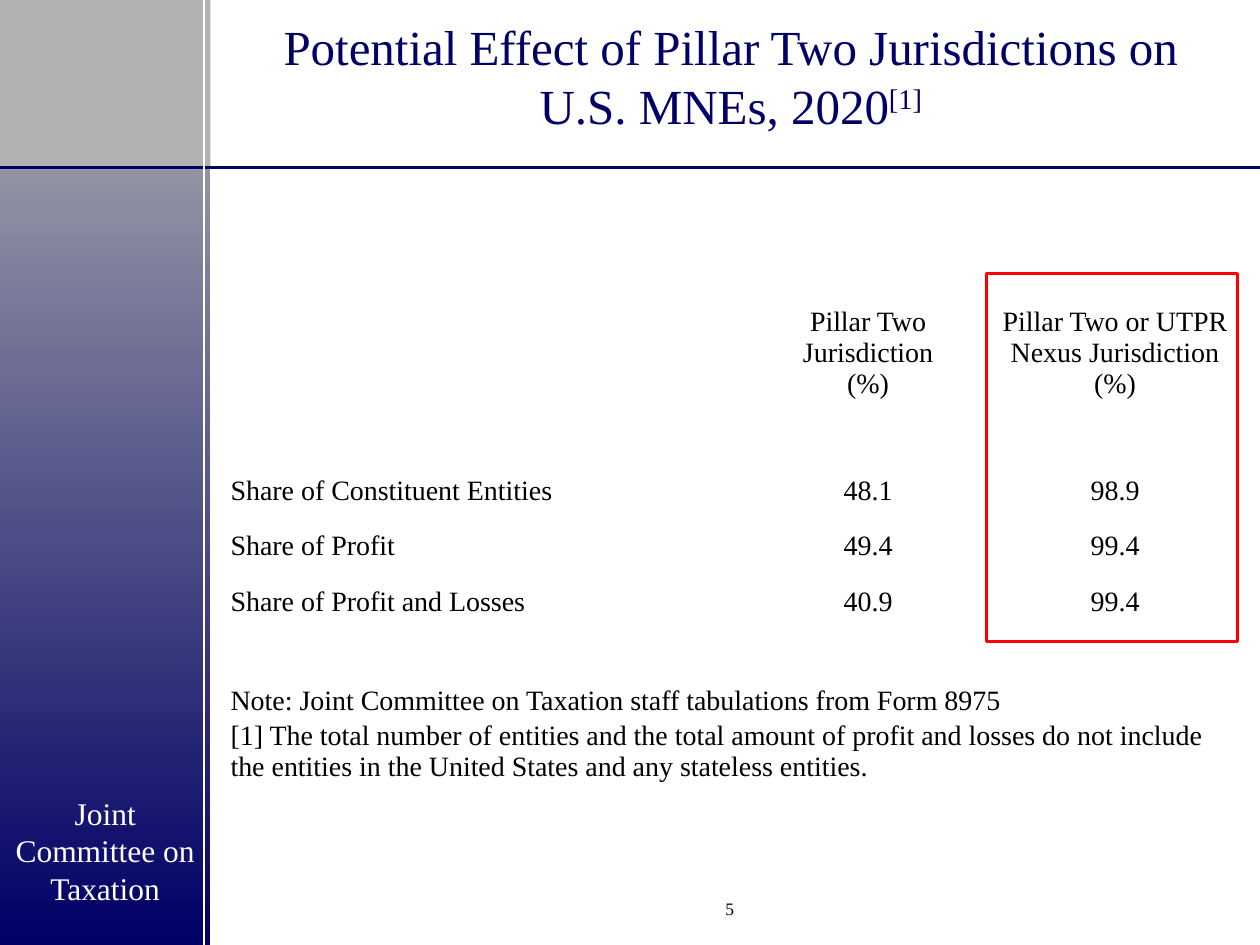
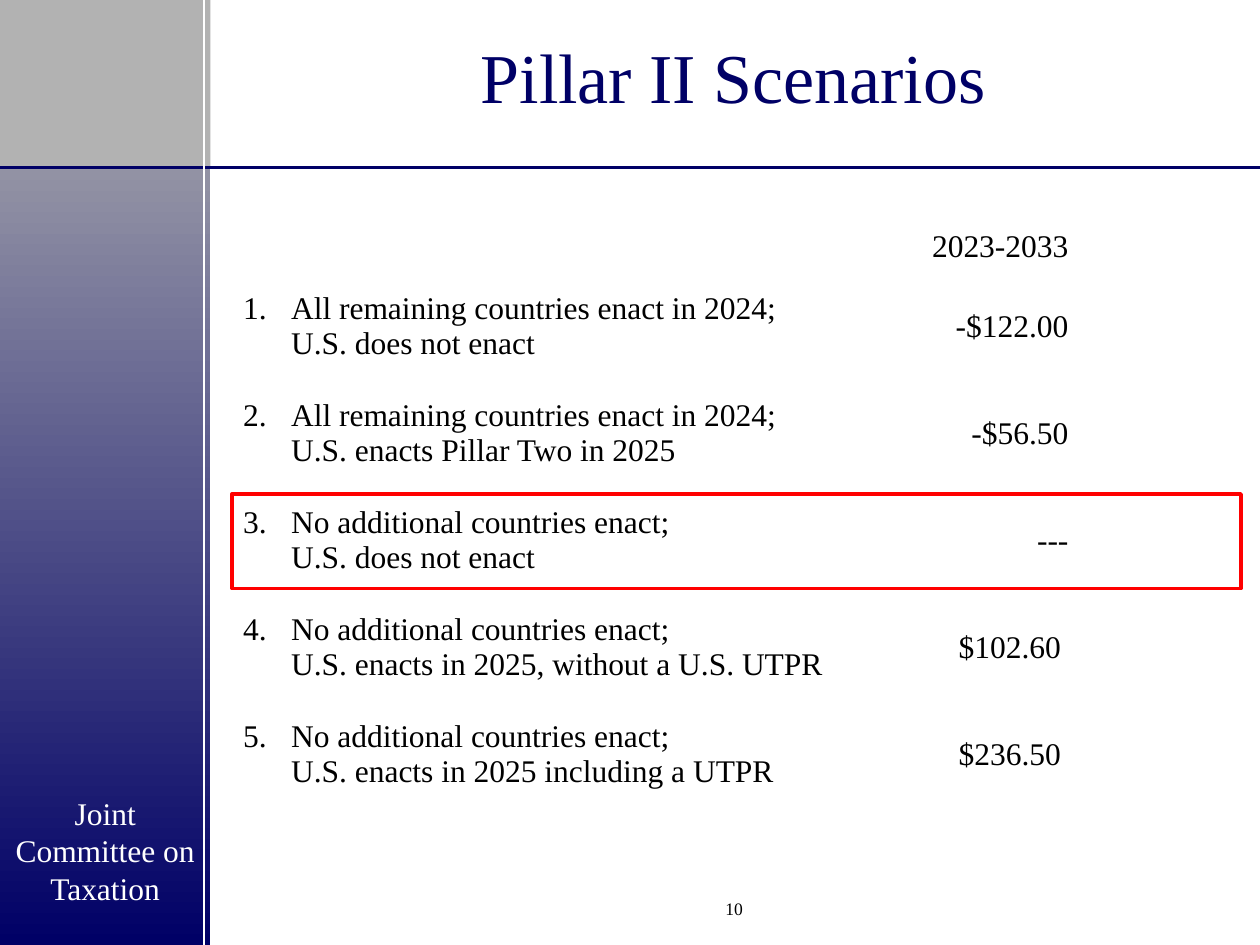
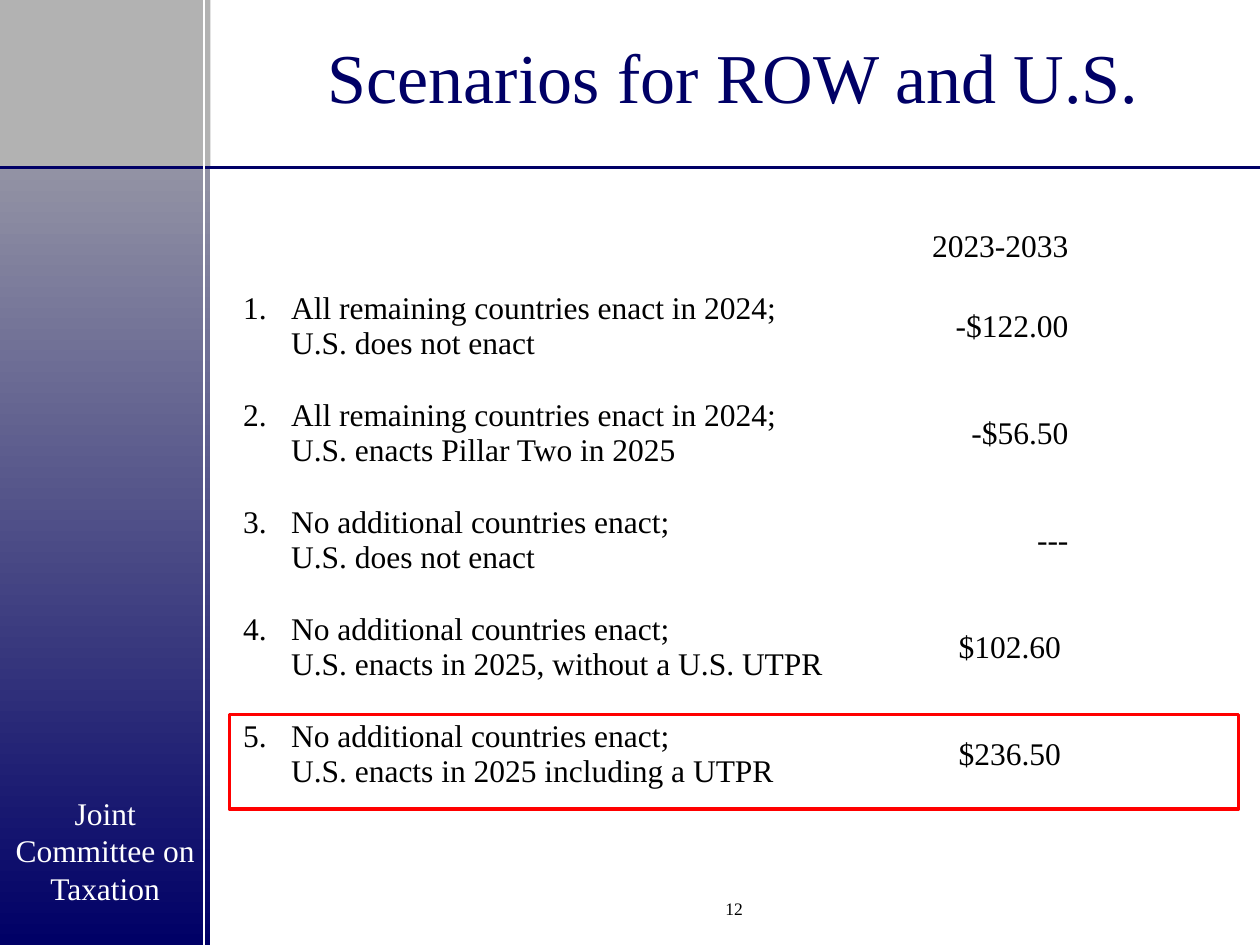
from dataclasses import dataclass

from lxml import etree
from pptx import Presentation
from pptx.dml.color import RGBColor
from pptx.enum.shapes import MSO_CONNECTOR, MSO_SHAPE
from pptx.enum.text import MSO_ANCHOR, PP_ALIGN
from pptx.oxml.ns import qn
from pptx.util import Inches, Pt

STRAIGHT = MSO_CONNECTOR.STRAIGHT
RECTANGLE = MSO_SHAPE.RECTANGLE
MIDDLE, BOTTOM = MSO_ANCHOR.MIDDLE, MSO_ANCHOR.BOTTOM
LEFT, CENTER, RIGHT = PP_ALIGN.LEFT, PP_ALIGN.CENTER, PP_ALIGN.RIGHT

FONT = "Times New Roman"
COLORS = {
    "navy": "000066",
    "gray": "B2B2B2",
    "white": "FFFFFF",
    "black": "000000",
    "red": "FF0000",
}
SLIDE_WIDTH, SLIDE_HEIGHT = 10, 7.5
BAND_WIDTH, HEADER_HEIGHT = 1.67, 1.33
CELL_MARGIN = 0.01
LIST_INDENT = 0.38


@dataclass(frozen=True)
class Box:
    left: float
    top: float
    width: float
    height: float

    def lengths(self) -> tuple:
        return tuple(Inches(v) for v in (self.left, self.top, self.width, self.height))


@dataclass(frozen=True)
class Scenario:
    countries: str
    united_states: str
    amount: str
    right_margin: float = CELL_MARGIN


@dataclass(frozen=True)
class ScenarioSlide:
    title: str
    number: int
    highlight: Box


SHARE_ROWS = [
    ("", "Pillar Two Jurisdiction\v(%)", "Pillar Two or UTPR Nexus Jurisdiction (%)"),
    ("Share of Constituent Entities", "48.1", "98.9"),
    ("Share of Profit", "49.4", "99.4"),
    ("Share of Profit and Losses", "40.9", "99.4"),
]
SHARE_NOTES = [
    ("Note: Joint Committee on Taxation staff tabulations from Form 8975", BOTTOM),
    ("[1] The total number of entities and the total amount of profit and losses do "
     "not include the entities in the United States and any stateless entities.", MIDDLE),
]
SCENARIOS = [
    Scenario("All remaining countries enact in 2024;", "U.S. does not enact", "-$122.00"),
    Scenario("All remaining countries enact in 2024;", "U.S. enacts Pillar Two in 2025",
             "-$56.50"),
    Scenario("No additional countries enact;", "U.S. does not enact", "---"),
    Scenario("No additional countries enact;", "U.S. enacts in 2025, without a U.S. UTPR",
             "$102.60", 0.07),
    Scenario("No additional countries enact;", "U.S. enacts in 2025 including a UTPR",
             "$236.50", 0.07),
]
SCENARIO_SLIDES = [
    ScenarioSlide("Pillar II Scenarios", 10, Box(1.84, 3.92, 8.01, 0.75)),
    ScenarioSlide("Scenarios for ROW and U.S.", 12, Box(1.82, 5.67, 8.01, 0.75)),
]


def rgb(name: str) -> RGBColor:
    return RGBColor.from_string(COLORS[name])


def format_text(text_frame, size: float, color: str, align=LEFT) -> None:
    for paragraph in text_frame.paragraphs:
        paragraph.alignment = align
        paragraph.font.size = Pt(size)
        for run in paragraph.runs:
            run.font.name = FONT
            run.font.size = Pt(size)
            run.font.bold = False
            run.font.color.rgb = rgb(color)


def add_text(slide, box: Box, text: str, size: float, color: str, align=LEFT, wrap=True):
    text_frame = slide.shapes.add_textbox(*box.lengths()).text_frame
    text_frame.word_wrap = wrap
    text_frame.text = text
    format_text(text_frame, size, color, align)
    return text_frame


def add_rectangle(slide, box: Box):
    shape = slide.shapes.add_shape(RECTANGLE, *box.lengths())
    shape.shadow.inherit = False
    return shape


def add_line(slide, start: tuple, end: tuple, color: str, width: float) -> None:
    connector = slide.shapes.add_connector(
        STRAIGHT, *(Inches(value) for value in (*start, *end)))
    connector.line.color.rgb = rgb(color)
    connector.line.width = Pt(width)
    etree.SubElement(connector._element.spPr, qn("a:effectLst"))


def add_highlight(slide, box: Box) -> None:
    shape = add_rectangle(slide, box)
    shape.fill.background()
    shape.line.color.rgb = rgb("red")
    shape.line.width = Pt(2)


def add_base_slide(presentation, number: int):
    """Add a blank slide with the side band, rules and page number."""
    slide = presentation.slides.add_slide(presentation.slide_layouts[6])

    band = add_rectangle(slide, Box(0, 0, BAND_WIDTH, SLIDE_HEIGHT))
    band.line.fill.background()
    band.fill.gradient()
    band.fill.gradient_angle = 270
    for stop, color, position in zip(band.fill.gradient_stops, ("gray", "navy"), (0, 1)):
        stop.color.rgb = rgb(color)
        stop.position = position

    corner = add_rectangle(slide, Box(0, 0, BAND_WIDTH, HEADER_HEIGHT))
    corner.line.fill.background()
    corner.fill.solid()
    corner.fill.fore_color.rgb = rgb("gray")

    add_line(slide, (0, HEADER_HEIGHT), (SLIDE_WIDTH, HEADER_HEIGHT), "navy", 1.5)
    add_text(slide, Box(0, 6.25, BAND_WIDTH, 1), "Joint Committee on Taxation",
             18, "white", CENTER)
    add_line(slide, (1.62, 0), (1.62, SLIDE_HEIGHT), "white", 0.75)
    add_text(slide, Box(5.66, 7.08, 0.37, 0.27), str(number), 10, "black", wrap=False)
    return slide


def add_title(slide, text: str, size: float, left: float):
    text_frame = add_text(slide, Box(left, 0.2, 8.06, 0.8), text, size, "navy", CENTER)
    text_frame.vertical_anchor = MIDDLE
    return text_frame


def add_plain_table(slide, left: float, top: float, widths: list, heights: list):
    """Add an empty table whose cells are all white."""
    box = Box(left, top, sum(widths), sum(heights))
    table = slide.shapes.add_table(len(heights), len(widths), *box.lengths()).table
    table.first_row = table.horz_banding = False
    for column, width in zip(table.columns, widths):
        column.width = Inches(width)
    for row, height in zip(table.rows, heights):
        row.height = Inches(height)
    for cell in table.iter_cells():
        cell.fill.solid()
        cell.fill.fore_color.rgb = rgb("white")
    return table


def fill_cell(cell, text: str, size: float, align=LEFT, anchor=MIDDLE,
              left: float = CELL_MARGIN, right: float = CELL_MARGIN) -> None:
    cell.margin_left, cell.margin_right = Inches(left), Inches(right)
    cell.margin_top, cell.margin_bottom = Inches(CELL_MARGIN), 0
    cell.vertical_anchor = anchor
    cell.text_frame.text = text
    format_text(cell.text_frame, size, "black", align)


def indent_scenario(text_frame, number: int) -> None:
    """Number the first line and align the second line with its text."""
    for paragraph, hanging in zip(text_frame.paragraphs, (LIST_INDENT, 0)):
        properties = paragraph._p.get_or_add_pPr()
        properties.set("marL", str(Inches(LIST_INDENT)))
        properties.set("indent", str(-Inches(hanging)))
    first = text_frame.paragraphs[0]._p.get_or_add_pPr()
    numbering = etree.Element(
        qn("a:buAutoNum"), type="arabicPeriod", startAt=str(number))
    first.insert(0, numbering)


def add_share_slide(presentation) -> None:
    slide = add_base_slide(presentation, 5)
    title = add_title(
        slide, "Potential Effect of Pillar Two Jurisdictions on U.S. MNEs, 2020", 28, 1.77)
    footnote_mark = title.paragraphs[0].add_run()
    footnote_mark.text = "[1]"
    format_text(title, 28, "navy", CENTER)
    footnote_mark._r.get_or_add_rPr().set("baseline", "30000")

    table = add_plain_table(slide, 1.82, 1.92, [4.09, 1.96, 1.96],
                            [1.75, 0.44, 0.44, 0.45, 0.69, 0.4, 0.4])
    for row_index, values in enumerate(SHARE_ROWS):
        for column_index, value in enumerate(values):
            fill_cell(table.cell(row_index, column_index), value, 16,
                      CENTER if column_index else LEFT)
    for row_index, (note, anchor) in enumerate(SHARE_NOTES, start=len(SHARE_ROWS)):
        cell = table.cell(row_index, 0)
        cell.merge(table.cell(row_index, 2))
        fill_cell(cell, note, 16, anchor=anchor)
    add_highlight(slide, Box(7.83, 2.17, 1.99, 2.92))


def add_scenario_slide(presentation, content: ScenarioSlide) -> None:
    slide = add_base_slide(presentation, content.number)
    table = add_plain_table(slide, 1.83, 1.75, [5.33, 1.33],
                            [0.41] + [0.85] * len(SCENARIOS))
    fill_cell(table.cell(0, 1), "2023-2033", 18, RIGHT)
    for number, scenario in enumerate(SCENARIOS, start=1):
        description = table.cell(number, 0)
        fill_cell(description, f"{scenario.countries}\n{scenario.united_states}", 18,
                  left=0.1)
        indent_scenario(description.text_frame, number)
        fill_cell(table.cell(number, 1), scenario.amount, 18, RIGHT,
                  right=scenario.right_margin)
    add_title(slide, content.title, 40, 1.79)
    add_highlight(slide, content.highlight)


def main() -> None:
    presentation = Presentation()
    presentation.slide_width = Inches(SLIDE_WIDTH)
    presentation.slide_height = Inches(SLIDE_HEIGHT)
    add_share_slide(presentation)
    for content in SCENARIO_SLIDES:
        add_scenario_slide(presentation, content)
    presentation.save("out.pptx")


if __name__ == "__main__":
    main()
